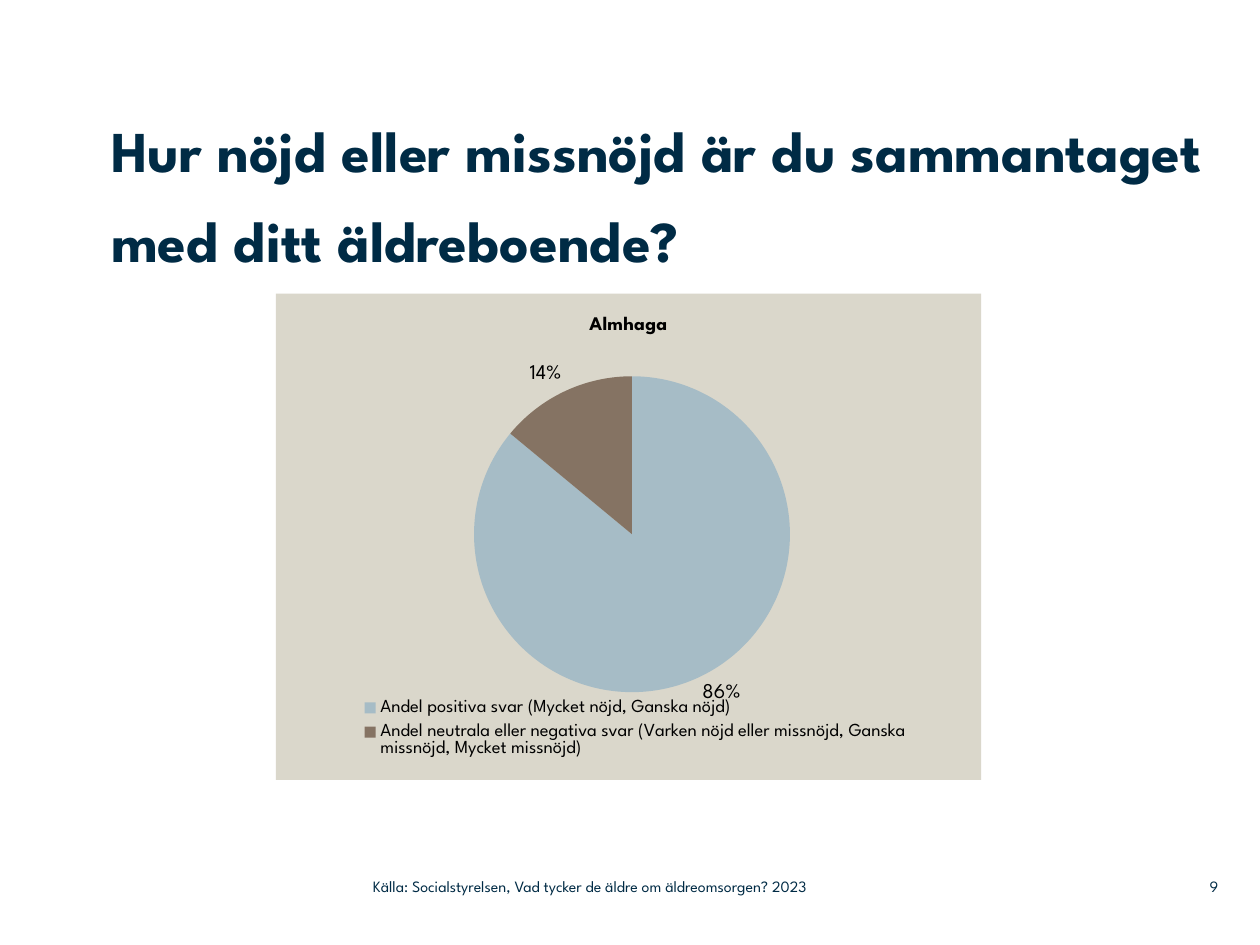
"""Build the survey slide on overall satisfaction with the care home."""
import lxml.etree
import pptx
import pptx.chart.data
import pptx.dml.color
import pptx.enum.chart
import pptx.enum.text
import pptx.oxml
import pptx.oxml.ns
import pptx.util

Cm = pptx.util.Cm
Pt = pptx.util.Pt
ALIGN = pptx.enum.text.PP_ALIGN
ANCHOR = pptx.enum.text.MSO_ANCHOR
CHART = pptx.enum.chart

HOME = "Almhaga"
ANSWERS = {
    "Andel positiva svar (Mycket nöjd, Ganska nöjd)": 86,
    "Andel neutrala eller negativa svar (Varken nöjd eller missnöjd, "
    "Ganska missnöjd, Mycket missnöjd)": 14,
}
TEXTS = [
    {"text": "Hur nöjd eller missnöjd är du sammantaget med ditt äldreboende?",
     "role": "heading", "box": (2.24, 1.9, 22.43, 3.61),
     "frame": {"vertical_anchor": ANCHOR.TOP},
     "paragraph": {"alignment": ALIGN.LEFT, "line_spacing": 1.3}},
    {"text": "Källa: Socialstyrelsen, Vad tycker de äldre om äldreomsorgen? 2023",
     "role": "footer", "box": (7.52, 17.5, 11.25, 0.74),
     "frame": {"vertical_anchor": ANCHOR.MIDDLE},
     "paragraph": {"alignment": ALIGN.LEFT}},
    {"text": "9",
     "role": "footer", "box": (23.37, 17.5, 1.19, 0.74),
     "frame": {"vertical_anchor": ANCHOR.MIDDLE},
     "paragraph": {"alignment": ALIGN.RIGHT}},
]
CHART_BOX = (5.56, 5.92, 14.22, 9.8)
PIE_AREA = {"x": 0.28, "y": 0.17, "w": 0.45, "h": 0.65}
LEGEND_AREA = {"x": 0.11, "y": 0.82, "w": 0.8, "h": 0.15}

THEME = {
    "font": "League Spartan",
    "ink": "002B45",
    "chart_ink": "000000",
    "panel": "DAD7CB",
    "slices": ["A6BCC6", "857363"],
    "heading": {"size": Pt(33), "bold": True},
    "footer": {"size": Pt(9), "bold": False},
    "chart": {"size": Pt(18), "bold": False},
    "chart_title": {"size": Pt(11), "bold": True},
    "labels": {"size": Pt(12), "bold": False},
    "legend": {"size": Pt(10.5), "bold": False},
}


def apply(target, values):
    for name, value in values.items():
        setattr(target, name, value)


def style(font, role, ink):
    apply(font, {"name": THEME["font"], **THEME[role]})
    font.color.rgb = pptx.dml.color.RGBColor.from_string(ink)


def add_text(slide, content):
    box = slide.shapes.add_textbox(*map(Cm, content["box"]))
    frame = box.text_frame
    margins = dict.fromkeys(
        ("margin_left", "margin_top", "margin_right", "margin_bottom"), 0)
    apply(frame, {"word_wrap": True, **margins, **content["frame"]})
    paragraph = frame.paragraphs[0]
    apply(paragraph, content["paragraph"])
    run = paragraph.add_run()
    run.text = content["text"]
    style(run.font, content["role"], THEME["ink"])


def place(part, area, index):
    for old in part.findall(pptx.oxml.ns.qn("c:layout")):
        part.remove(old)
    layout = lxml.etree.Element(pptx.oxml.ns.qn("c:layout"))
    manual = lxml.etree.SubElement(layout, pptx.oxml.ns.qn("c:manualLayout"))
    settings = {"xMode": "edge", "yMode": "edge", **area}
    if index == 0:
        settings = {"layoutTarget": "inner", **settings}
    for name, value in settings.items():
        lxml.etree.SubElement(
            manual, pptx.oxml.ns.qn(f"c:{name}"), val=str(value))
    part.insert(index, layout)


def fill_panel(chart):
    panel = pptx.oxml.parse_xml(
        f'<c:spPr {pptx.oxml.ns.nsdecls("c", "a")}><a:solidFill>'
        f'<a:srgbClr val="{THEME["panel"]}"/></a:solidFill>'
        '<a:ln><a:noFill/></a:ln></c:spPr>')
    chart.element.find(pptx.oxml.ns.qn("c:chart")).addnext(panel)


def add_answers(slide):
    data = pptx.chart.data.CategoryChartData()
    data.categories = list(ANSWERS)
    data.add_series(HOME, list(ANSWERS.values()))
    chart = slide.shapes.add_chart(
        CHART.XL_CHART_TYPE.PIE, *map(Cm, CHART_BOX), data).chart
    ink = THEME["chart_ink"]
    style(chart.font, "chart", ink)
    fill_panel(chart)

    title = chart.chart_title.text_frame
    title.text = HOME
    style(title.paragraphs[0].runs[0].font, "chart_title", ink)

    apply(chart, {"has_legend": True})
    apply(chart.legend, {"position": CHART.XL_LEGEND_POSITION.BOTTOM,
                         "include_in_layout": False})
    style(chart.legend.font, "legend", ink)

    plot = chart.plots[0]
    apply(plot, {"vary_by_categories": True, "has_data_labels": True})
    apply(plot.data_labels, {
        "show_percentage": True, "show_value": False,
        "number_format": "0%", "number_format_is_linked": False,
        "position": CHART.XL_LABEL_POSITION.OUTSIDE_END})
    style(plot.data_labels.font, "labels", ink)
    for index, color in enumerate(THEME["slices"]):
        slice_format = plot.series[0].points[index].format
        slice_format.fill.solid()
        slice_format.fill.fore_color.rgb = (
            pptx.dml.color.RGBColor.from_string(color))
        slice_format.line.fill.background()

    plot_area = chart.element.find(".//" + pptx.oxml.ns.qn("c:plotArea"))
    legend = chart.element.find(".//" + pptx.oxml.ns.qn("c:legend"))
    place(plot_area, PIE_AREA, 0)
    place(legend, LEGEND_AREA, 1)


def main():
    deck = pptx.Presentation()
    apply(deck, {"slide_width": Cm(25.4), "slide_height": Cm(19.05)})
    slide = deck.slides.add_slide(deck.slide_layouts[6])
    for content in TEXTS:
        add_text(slide, content)
    add_answers(slide)
    deck.save("out.pptx")


if __name__ == "__main__":
    main()
